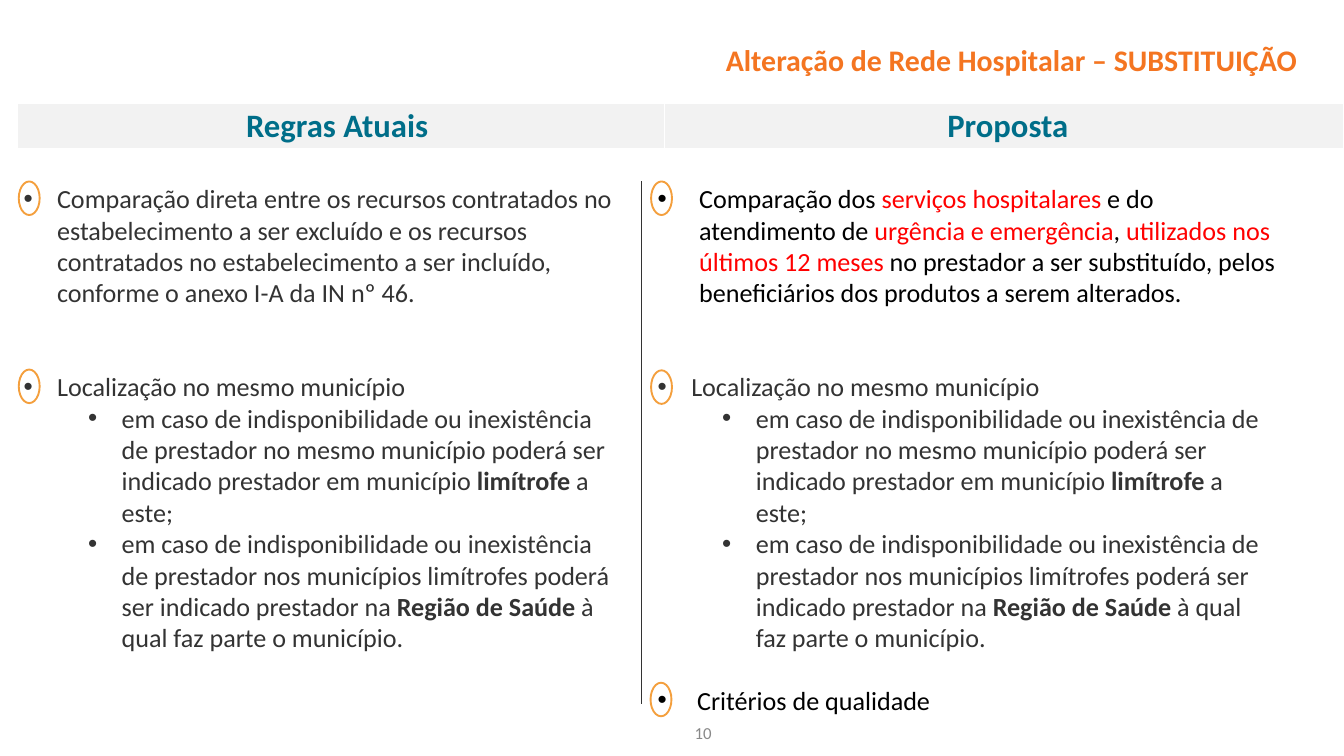
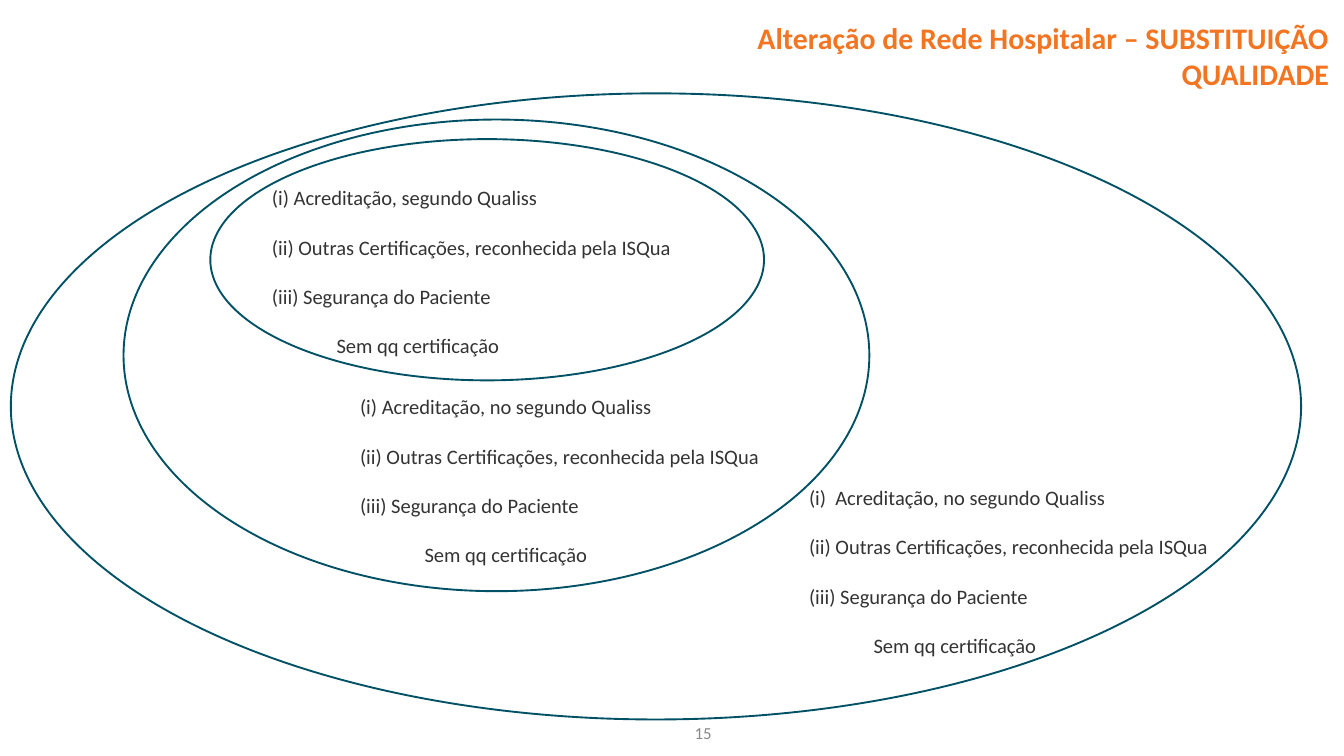
"""Builds two slides on replacing hospitals: rules compared, then quality nesting."""
from lxml.etree import SubElement
from pptx import Presentation
from pptx.dml.color import RGBColor as Rgb
from pptx.enum.shapes import MSO_CONNECTOR as Connector, MSO_SHAPE as Shape
from pptx.enum.text import MSO_ANCHOR as Anchor, PP_ALIGN as Align
from pptx.oxml.ns import qn
from pptx.util import Cm, Pt

FONT = "Calibri"
ORANGE, AMBER, TEAL, DARK_TEAL = "F47521", "F49F3D", "006E89", "005165"
INK, BLACK, RED, GREY, PALE, WHITE = "333333", "000000", "FF0000", "898989", "F2F2F2", "FFFFFF"

TITLE = "Alteração de Rede Hospitalar – SUBSTITUIÇÃO"
HEADINGS = [("Regras Atuais ", 24.49), (" Proposta", 25.65)]

TOP = dict(indent=1.27, hanging=1.27, bullet=True)
WIDE = dict(TOP, indent=1.57, hanging=1.57)
NESTED = dict(TOP, indent=3.71, level=1)
BODY_GAP, LINE_GAP = 67, 33.5

LOCATION = [
    (["Localização no mesmo município"], dict(TOP, before=BODY_GAP)),
    (["em caso de indisponibilidade ou inexistência de prestador no mesmo município "
      "poderá ser indicado prestador em município ",
      ("limítrofe", dict(bold=True)), " a este;"], NESTED),
    (["em caso de indisponibilidade ou inexistência de prestador nos municípios "
      "limítrofes poderá ser indicado prestador na ",
      ("Região de Saúde", dict(bold=True)), " à qual faz parte o município."], NESTED),
]
CURRENT_RULES = [
    (["Comparação direta entre os recursos contratados no estabelecimento a ser excluído "
      "e os recursos contratados no estabelecimento a ser incluído, "
      "conforme o anexo I-A da IN nº 46."], TOP),
    *LOCATION,
]
NEW = dict(color=RED)
PROPOSAL = [
    (["Comparação dos ", ("serviços hospitalares ", NEW), "e do atendimento de ",
      ("urgência e emergência", NEW), ", ", ("utilizados nos últimos 12 meses ", NEW),
      "no prestador a ser substituído, pelos beneficiários dos produtos a serem alterados."],
     dict(WIDE, color=BLACK)),
    *LOCATION,
    ([" Critérios de qualidade"], dict(TOP, color=BLACK, before=LINE_GAP)),
]
RULE_BOXES = [(CURRENT_RULES, (0.64, 6.78, 22.81, 21.79)), (PROPOSAL, (24.61, 6.78, 23.83, 20.6))]
BULLET_RINGS = [(0.71, 6.86), (0.71, 13.97), (24.61, 6.86), (24.61, 14), (24.59, 25.81)]

QUALITY_RINGS = [(0.41, 3.53, 48.77, 23.67), (7.95, 5.26, 20.93, 9.12), (4.67, 4.52, 28.19, 17.83)]
QUALITY_LISTS = [
    ("(i) Acreditação, segundo Qualiss", (10.03, 6.88, 17.48, 6.83)),
    ("(i) Acreditação, no segundo Qualiss", (13.36, 14.78, 16.51, 6.83)),
    ("(i)  Acreditação, no segundo Qualiss", (30.33, 18.21, 16.51, 6.83)),
]
OTHER_CRITERIA = ["(ii) Outras Certificações, reconhecida pela ISQua", "(iii) Segurança do Paciente"]
NO_CERTIFICATE = "Sem qq certificação"
QUALITY_GAP = 26.5


def rgb(color):
    return Rgb.from_string(color)


def write_text(frame, paragraphs, **base):
    """Fill a frame with paragraphs of (spans, format); a span is text or (text, format)."""
    for number, (spans, own) in enumerate(paragraphs):
        style = {**base, **own}
        para = frame.paragraphs[0] if number == 0 else frame.add_paragraph()
        para.level = style.get("level", 0)
        para.alignment = style.get("align", Align.LEFT)
        properties = para._p.get_or_add_pPr()
        properties.set("marL", str(Cm(style.get("indent", 0))))
        properties.set("indent", str(-Cm(style.get("hanging", 0))))
        if style.get("bullet"):
            SubElement(properties, qn("a:buFont"), typeface="Arial")
            SubElement(properties, qn("a:buChar"), char="•")
        if number and "before" in style:
            para.space_before = Pt(style["before"])
        for item in spans:
            text, extra = (item, {}) if isinstance(item, str) else item
            look = {**style, **extra}
            span = para.add_run()
            span.text = text
            span.font.name = FONT
            span.font.size = Pt(look["size"])
            span.font.bold = look.get("bold", False)
            span.font.color.rgb = rgb(look["color"])


def add_text(page, place, paragraphs, anchor=Anchor.TOP, right_inset=0.25, **style):
    box = page.shapes.add_textbox(*map(Cm, place))
    frame = box.text_frame
    frame.word_wrap = True
    frame.vertical_anchor = anchor
    frame.margin_right = Cm(right_inset)
    write_text(frame, paragraphs, **style)


def add_ring(page, place, color):
    ring = page.shapes.add_shape(Shape.FLOWCHART_CONNECTOR, *map(Cm, place))
    ring.shadow.inherit = False
    ring.fill.background()
    ring.line.color.rgb = rgb(color)
    ring.line.width = Pt(2)


def add_page(deck, number, lines, place, right_inset):
    page = deck.slides.add_slide(deck.slide_layouts[6])
    add_text(page, (26.01, 27.2, 1.98, 1.02), [([number], {})], size=18, color=GREY)
    add_text(page, place, [([line], {}) for line in lines], Anchor.MIDDLE, right_inset,
             size=32, color=ORANGE, bold=True, align=Align.RIGHT)
    return page


def add_border(cell, side, points):
    line = SubElement(cell._tc.get_or_add_tcPr(), qn(f"a:{side}"), w=str(Pt(points)))
    fill = SubElement(line, qn("a:solidFill"))
    SubElement(fill, qn("a:srgbClr"), val=WHITE)


def add_headings(page):
    width = sum(column for _, column in HEADINGS)
    table = page.shapes.add_table(1, len(HEADINGS), Cm(0.64), Cm(3.91), Cm(width), Cm(1.73)).table
    for index, (text, column) in enumerate(HEADINGS):
        table.columns[index].width = Cm(column)
        cell = table.cell(0, index)
        for side, points in [("lnL", 1), ("lnR", 1), ("lnT", 1), ("lnB", 3)]:
            add_border(cell, side, points)
        cell.fill.solid()
        cell.fill.fore_color.rgb = rgb(PALE)
        write_text(cell.text_frame, [([text], {})], size=35, color=TEAL, bold=True,
                   align=Align.CENTER)


def add_divider(page):
    divider = page.shapes.add_connector(Connector.STRAIGHT, Cm(24.26), Cm(6.86), Cm(24.26), Cm(26.62))
    divider.line.color.rgb = rgb(INK)
    divider.line.width = Pt(0.75)
    SubElement(divider._element.spPr, qn("a:effectLst"))


def build_rules(deck):
    page = add_page(deck, "10", [TITLE + " "], (0, 1.12, 50.8, 2.29), 1.5)
    add_headings(page)
    for paragraphs, place in RULE_BOXES:
        add_text(page, place, paragraphs, size=28, color=INK)
    add_divider(page)
    for left, top in BULLET_RINGS:
        add_ring(page, (left, top, 0.79, 1.27), AMBER)


def build_quality(deck):
    page = add_page(deck, "15", [TITLE, "QUALIDADE"], (0.94, 0.76, 49.86, 2.69), 0.56)
    for place in QUALITY_RINGS:
        add_ring(page, place, DARK_TEAL)
    for accreditation, place in QUALITY_LISTS:
        paragraphs = [([line], {}) for line in [accreditation, *OTHER_CRITERIA]]
        paragraphs.append(([NO_CERTIFICATE], dict(indent=2.44, level=1)))
        add_text(page, place, paragraphs, size=22, color=INK, before=QUALITY_GAP)


def main():
    deck = Presentation()
    deck.slide_width, deck.slide_height = Cm(50.8), Cm(28.58)
    build_rules(deck)
    build_quality(deck)
    deck.save("out.pptx")


if __name__ == "__main__":
    main()
